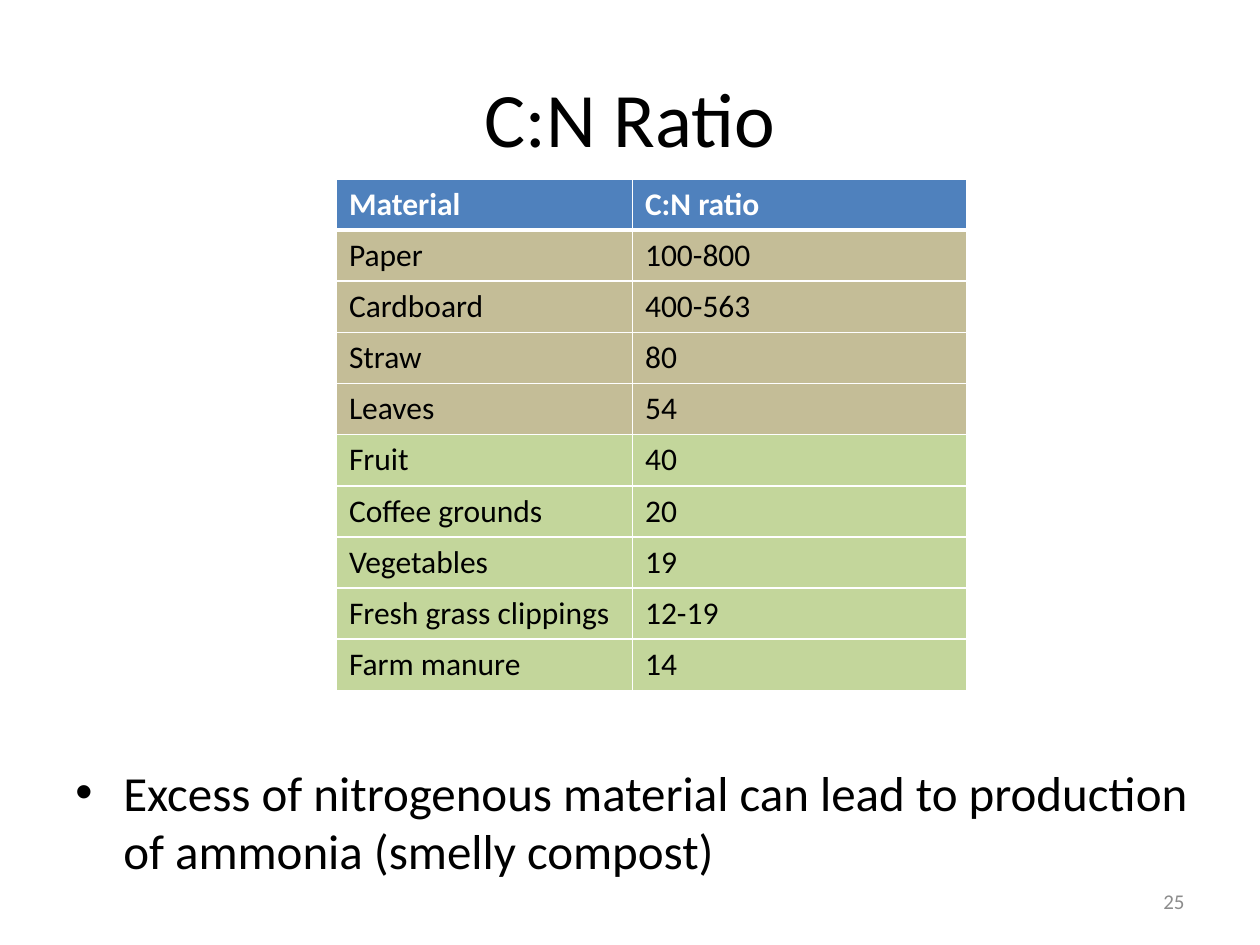
import pptx
import pptx.util
import pptx.dml.color
import pptx.enum.text
import pptx.oxml
import lxml.etree

HEADING = "C:N Ratio"
HEADER = ("Material", "C:N ratio")
BROWNS = [("Paper", "100-800"), ("Cardboard", "400-563"), ("Straw", "80"), ("Leaves", "54")]
GREENS = [
    ("Fruit", "40"),
    ("Coffee grounds", "20"),
    ("Vegetables", "19"),
    ("Fresh grass clippings", "12-19"),
    ("Farm manure", "14"),
]
REMARK = "Excess of nitrogenous material can lead to production of ammonia (smelly compost)"
PAGE = "25"

COLORS = {
    "text": "000000",
    "white": "FFFFFF",
    "header": "4F81BD",
    "brown": "C4BD97",
    "green": "C3D69B",
    "page": "8C8C8C",
}
WIDTH, HEIGHT = 10, 7.5
TABLE_BOX = (2.67, 1.42, 5, 4.06)
COLUMN_SHARES = (0.47, 0.53)
ALIGN = pptx.enum.text.PP_ALIGN
ANCHOR = pptx.enum.text.MSO_ANCHOR
NS = "http://schemas.openxmlformats.org/drawingml/2006/main"


def inches(values):
    return [pptx.util.Inches(value) for value in values]


def rgb(name):
    return pptx.dml.color.RGBColor.from_string(COLORS[name])


def write(frame, text, size, color="text", bold=False, **layout):
    frame.text = text
    paragraph = frame.paragraphs[0]
    for key, value in layout.items():
        setattr(paragraph, key, value)
    font = paragraph.runs[0].font
    for key, value in {"name": "Calibri", "size": pptx.util.Pt(size), "bold": bold}.items():
        setattr(font, key, value)
    font.color.rgb = rgb(color)
    return paragraph


def place(shape, box, anchor):
    for key, value in zip(("left", "top", "width", "height"), inches(box)):
        setattr(shape, key, value)
    frame = shape.text_frame
    for key, value in {"word_wrap": True, "vertical_anchor": anchor}.items():
        setattr(frame, key, value)
    return frame


def add_borders(cell, widths):
    properties = cell._tc.get_or_add_tcPr()
    for index, (side, points) in enumerate(widths.items()):
        line = pptx.oxml.parse_xml(
            f'<a:ln{side} xmlns:a="{NS}" w="{pptx.util.Pt(points)}"><a:solidFill>'
            f'<a:srgbClr val="{COLORS["white"]}"/></a:solidFill></a:ln{side}>'
        )
        properties.insert(index, line)


def add_ratio_table(slide):
    rows = [(HEADER, "header")]
    rows += [(row, "brown") for row in BROWNS] + [(row, "green") for row in GREENS]
    table = slide.shapes.add_table(len(rows), len(HEADER), *inches(TABLE_BOX)).table
    for column, share in zip(table.columns, COLUMN_SHARES):
        column.width = pptx.util.Inches(TABLE_BOX[2] * share)
    for r, (values, fill) in enumerate(rows):
        table.rows[r].height = pptx.util.Inches(TABLE_BOX[3] / len(rows))
        for c, value in enumerate(values):
            cell = table.cell(r, c)
            cell.fill.solid()
            cell.fill.fore_color.rgb = rgb(fill)
            write(cell.text_frame, value, 18, "text" if r else "white", bold=r == 0)
            add_borders(cell, {"L": 1, "R": 1, "T": 3 if r == 1 else 1, "B": 1 if r else 3})


def add_remark(slide):
    frame = place(slide.shapes.add_textbox(0, 0, 0, 0), (0.5, 6, 9.08, 1), ANCHOR.TOP)
    paragraph = write(frame, REMARK, 28, space_before=pptx.util.Pt(5.6))
    properties = paragraph._p.get_or_add_pPr()
    indent = pptx.util.Inches(0.38)
    for key, value in {"marL": indent, "indent": -indent}.items():
        properties.set(key, str(value))
    lxml.etree.SubElement(properties, f"{{{NS}}}buFont", typeface="Arial")
    lxml.etree.SubElement(properties, f"{{{NS}}}buChar", char="•")


def main():
    deck = pptx.Presentation()
    deck.slide_width, deck.slide_height = inches((WIDTH, HEIGHT))
    slide = deck.slides.add_slide(deck.slide_layouts[5])
    title = place(slide.shapes.title, (0.5, 0.3, 9, 1.25), ANCHOR.MIDDLE)
    write(title, HEADING, 44, alignment=ALIGN.CENTER)
    add_remark(slide)
    add_ratio_table(slide)
    page = place(slide.shapes.add_textbox(0, 0, 0, 0), (7.17, 6.95, 2.33, 0.4), ANCHOR.MIDDLE)
    write(page, PAGE, 12, "page", alignment=ALIGN.RIGHT)
    deck.save("out.pptx")


if __name__ == "__main__":
    main()
